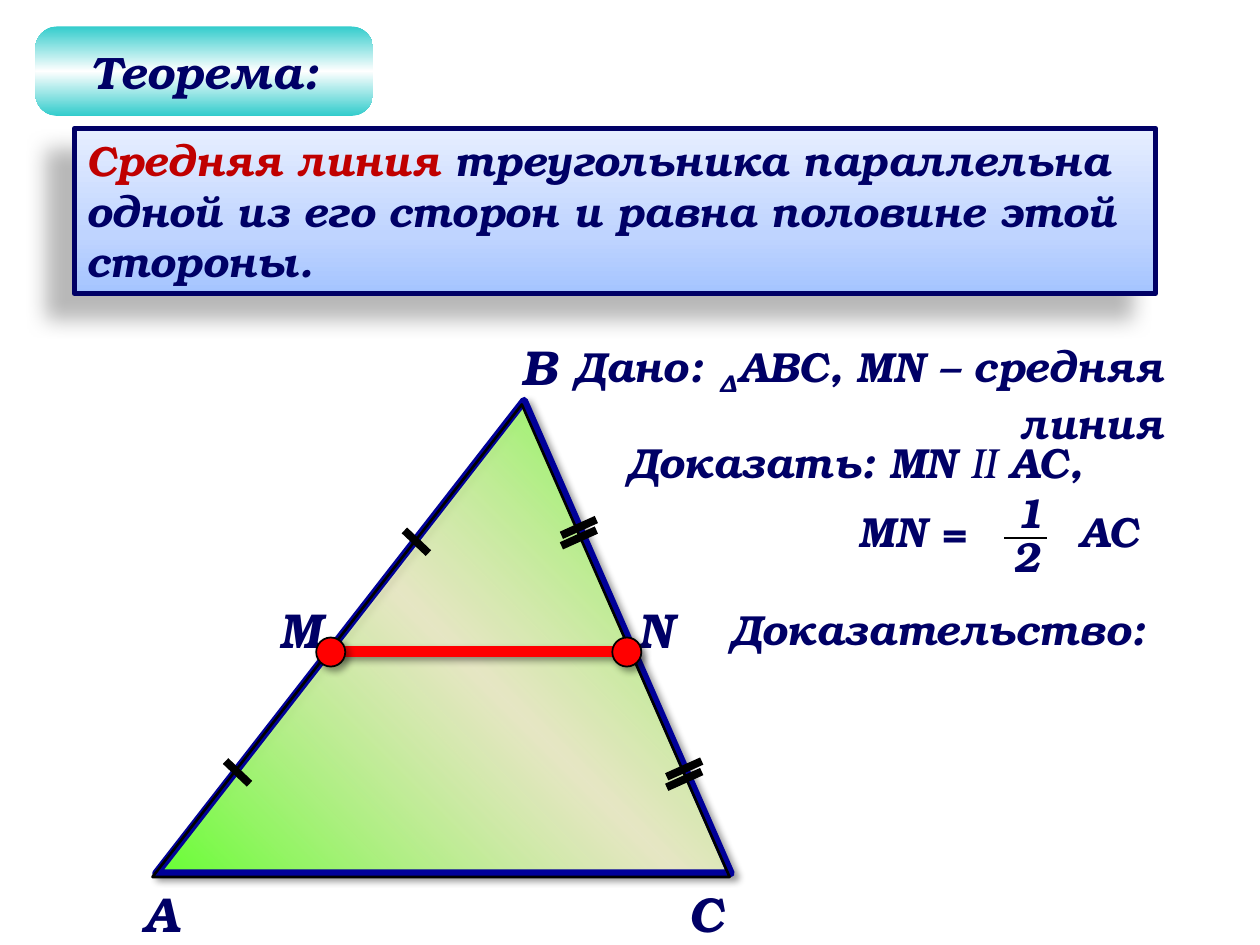
from dataclasses import dataclass

from lxml.etree import SubElement
from pptx import Presentation
from pptx.dml.color import RGBColor
from pptx.enum.shapes import MSO_CONNECTOR as Connector, MSO_SHAPE as Preset
from pptx.enum.text import MSO_ANCHOR as Anchor, MSO_AUTO_SIZE as AutoSize, PP_ALIGN as Align
from pptx.oxml.ns import qn
from pptx.util import Pt


@dataclass(frozen=True)
class Theme:
    font: str = "TeX Gyre Bonum"
    ink: str = "000066"
    accent: str = "C00000"
    outline: str = "000099"
    black: str = "000000"
    red: str = "FF0000"
    triangle: tuple = ((0, "66FF33", 100), (50, "FFFFC5", 59), (100, "66FF33", 100))
    panel: tuple = ((0, "A4C4FF", 100), (35, "BFD4FF", 100), (100, "E6EEFF", 100))
    badge: tuple = ((0, "33CCCC", 100), (50, "FFFFFF", 100), (100, "33CCCC", 100))
    body: int = 24
    title: int = 26
    label: int = 28


THEME = Theme()
SOFT_SHADOW = dict(alpha=40, blur=4, distance=3, angle=45)
PANEL_SHADOW = dict(alpha=28, blur=11.8, distance=19.7, angle=141)


def rgb(color):
    return RGBColor.from_string(color)


def add_color(parent, color, alpha):
    node = SubElement(parent, qn("a:srgbClr"), val=color)
    if alpha < 100:
        SubElement(node, qn("a:alpha"), val=str(alpha * 1000))


def set_shadow(shape, alpha, blur, distance, angle):
    effects = shape._element.spPr.find(qn("a:effectLst"))
    shadow = SubElement(effects, qn("a:outerShdw"), blurRad=str(Pt(blur)), dist=str(Pt(distance)),
                        dir=str(angle * 60000), algn="ctr", rotWithShape="0")
    add_color(shadow, THEME.black, alpha)


def set_gradient(shape, stops, angle):
    """Fill with (position, colour, opacity) stops; the angle runs clockwise."""
    shape.fill.gradient()
    gradient = shape._element.spPr.find(qn("a:gradFill"))
    for child in list(gradient):
        gradient.remove(child)
    stop_list = SubElement(gradient, qn("a:gsLst"))
    for position, color, alpha in stops:
        add_color(SubElement(stop_list, qn("a:gs"), pos=str(position * 1000)), color, alpha)
    SubElement(gradient, qn("a:lin"), ang=str(angle * 60000), scaled="0")


def style_shape(shape, fill=None, gradient=None, angle=0, line=None, weight=1, shadow=None):
    shape.shadow.inherit = False
    if gradient:
        set_gradient(shape, gradient, angle)
    elif fill:
        shape.fill.solid()
        shape.fill.fore_color.rgb = rgb(fill)
    else:
        shape.fill.background()
    if line:
        shape.line.color.rgb = rgb(line)
        shape.line.width = Pt(weight)
    else:
        shape.line.fill.background()
    if shadow:
        set_shadow(shape, **shadow)


def add_shape(page, preset, left, top, width, height, adjust=None, **style):
    shape = page.shapes.add_shape(preset, Pt(left), Pt(top), Pt(width), Pt(height))
    if adjust is not None:
        shape.adjustments[0] = adjust
    style_shape(shape, **style)
    return shape


def add_polygon(page, points, **style):
    start, *rest = [(Pt(x), Pt(y)) for x, y in points]
    builder = page.shapes.build_freeform(*start)
    builder.add_line_segments(rest, close=True)
    style_shape(builder.convert_to_shape(), **style)


def add_line(page, x1, y1, x2, y2, color=THEME.black, weight=4.5, shadow=None):
    line = page.shapes.add_connector(Connector.STRAIGHT, Pt(x1), Pt(y1), Pt(x2), Pt(y2))
    line.line.color.rgb = rgb(color)
    line.line.width = Pt(weight)
    SubElement(line._element.spPr, qn("a:effectLst"))
    if shadow:
        set_shadow(line, **shadow)


def write_text(shape, *spans, size=THEME.body, align=Align.LEFT, anchor=Anchor.TOP, wrap=True,
               tab=None, auto_size=AutoSize.SHAPE_TO_FIT_TEXT):
    """Write one paragraph; a span is a string or a (string, format) pair."""
    frame = shape.text_frame
    frame.word_wrap = wrap
    frame.auto_size = auto_size
    frame.vertical_anchor = anchor
    para = frame.paragraphs[0]
    para.alignment = align
    if tab:
        tabs = SubElement(para._p.get_or_add_pPr(), qn("a:tabLst"))
        SubElement(tabs, qn("a:tab"), pos=str(Pt(tab)), algn="l")
    for item in spans:
        text, look = (item, {}) if isinstance(item, str) else item
        span = para.add_run()
        span.text = text
        font = span.font
        font.name, font.size = THEME.font, Pt(size)
        font.bold, font.italic = look.get("bold", True), True
        font.color.rgb = rgb(look.get("color", THEME.ink))
        if "baseline" in look:
            span._r.get_or_add_rPr().set("baseline", str(look["baseline"] * 1000))


def add_text(page, left, top, width, height, *spans, **look):
    box = page.shapes.add_textbox(Pt(left), Pt(top), Pt(width), Pt(height))
    write_text(box, *spans, **look)


def add_statement(page):
    add_text(page, 410.4, 341.3, 255.6, 36, "Доказательство:")
    add_text(page, 321.1, 190.8, 90, 36.7, "Дано:", wrap=False)
    add_text(page, 337.7, 190.8, 334, 65.5, ("Δ", dict(baseline=-25)),
             "ABC, МN – средняя линия", align=Align.RIGHT)
    add_text(page, 351.4, 246.2, 315.4, 36, "Доказать: МN ", ("II ", dict(bold=False)), "АС,")
    add_text(page, 483.8, 285.1, 180, 36.7, "MN =\tАС", tab=126)
    add_text(page, 571.7, 299.5, 36, 36, "2")
    add_text(page, 573.8, 274.3, 36, 36, "1")
    add_line(page, 573.8, 307.4, 598.3, 307.4, weight=1.5)


def add_ticks(page, starts, dx, dy, gaps):
    for x, y in starts:
        for gap in gaps:
            add_line(page, x, y + gap, x + dx, y + gap + dy)


def add_triangle(page):
    add_polygon(page, [(417.6, 499), (299.5, 229), (89.3, 499)], gradient=THEME.triangle,
                angle=315, line=THEME.outline, weight=4.5, shadow=SOFT_SHADOW)


def add_construction(page):
    """Vertex letters, midline with its end points and equal-segment ticks."""
    for letter, left, top in (("А", 74.9, 501.1), ("B", 290.9, 188.6), ("C", 386.6, 501.1),
                              ("М", 152.6, 339.1), ("N", 357.1, 339.1)):
        add_text(page, left, top, 36, 41, letter, size=THEME.label, wrap=False)
    add_shape(page, Preset.ISOSCELES_TRIANGLE, 87.1, 231.1, 329.8, 270, adjust=0.64,
              line=THEME.black, weight=1.5)
    add_line(page, 187.2, 372.2, 358.6, 372.2, THEME.red, 6, SOFT_SHADOW)
    add_ticks(page, [(231.1, 303.1), (128.9, 434.9)], 13.7, 13, gaps=[0])
    add_ticks(page, [(401, 434.9), (340.8, 296.9)], -20, 9, gaps=[0, 6])
    for left in (180.7, 349.9):
        add_shape(page, Preset.OVAL, left, 364.3, 16.6, 16.6, fill=THEME.red,
                  line=THEME.black, shadow=SOFT_SHADOW)


def add_theorem(page):
    panel = add_shape(page, Preset.RECTANGLE, 42.5, 73.4, 617.8, 94.3, gradient=THEME.panel,
                      angle=270, line=THEME.ink, weight=3, shadow=PANEL_SHADOW)
    write_text(panel, ("Средняя линия ", dict(color=THEME.accent)),
               "треугольника параллельна одной из его сторон и равна половине этой стороны.")
    badge = add_shape(page, Preset.ROUNDED_RECTANGLE, 20.2, 15.1, 193, 51.1, adjust=0.25,
                      gradient=THEME.badge, angle=90)
    write_text(badge, "Теорема:", size=THEME.title, align=Align.CENTER, anchor=Anchor.MIDDLE,
               wrap=False, auto_size=AutoSize.NONE)


def main():
    deck = Presentation()
    deck.slide_width, deck.slide_height = Pt(720), Pt(540)
    page = deck.slides.add_slide(deck.slide_layouts[6])
    add_triangle(page)
    add_statement(page)
    add_construction(page)
    add_theorem(page)
    deck.save("out.pptx")


if __name__ == "__main__":
    main()
